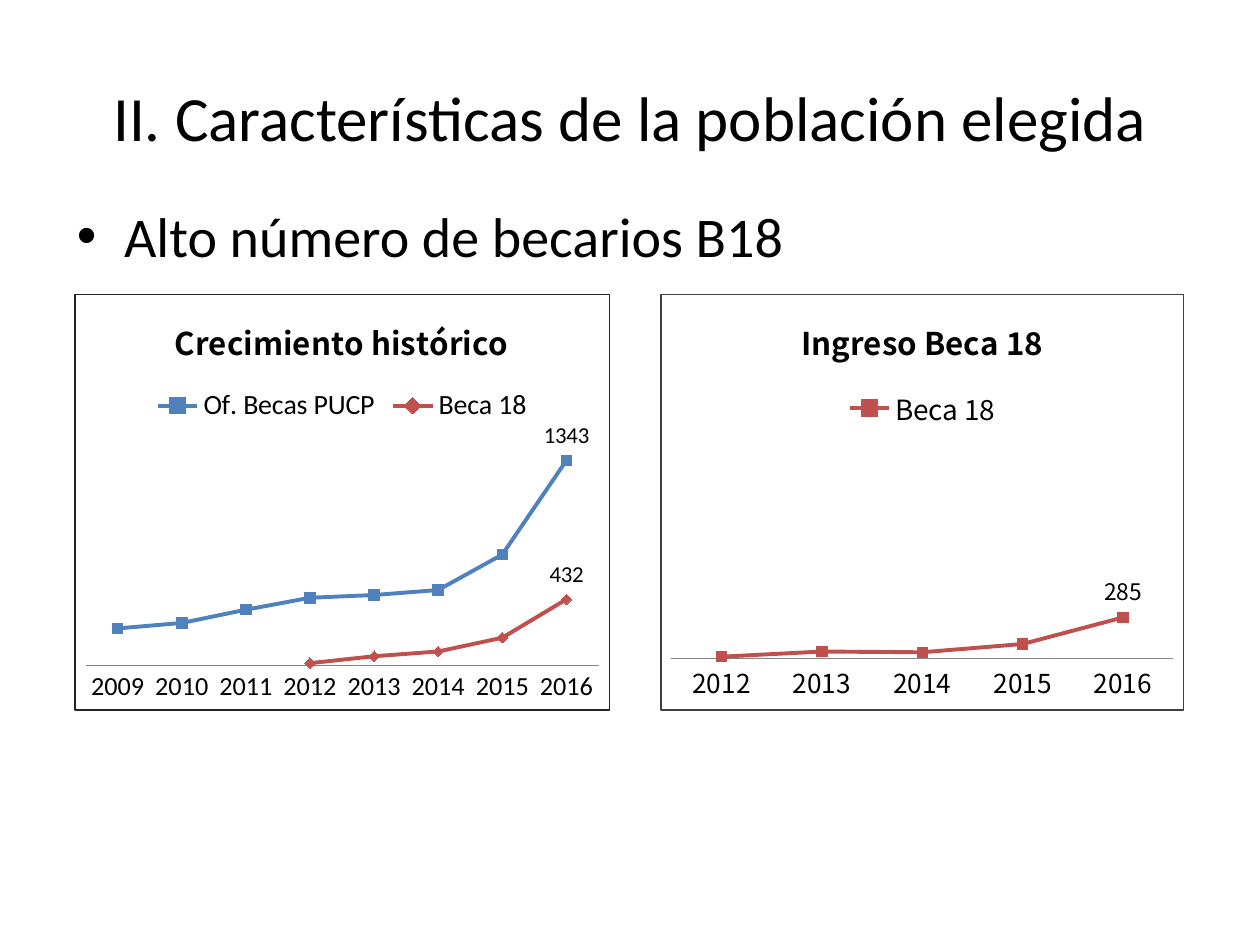
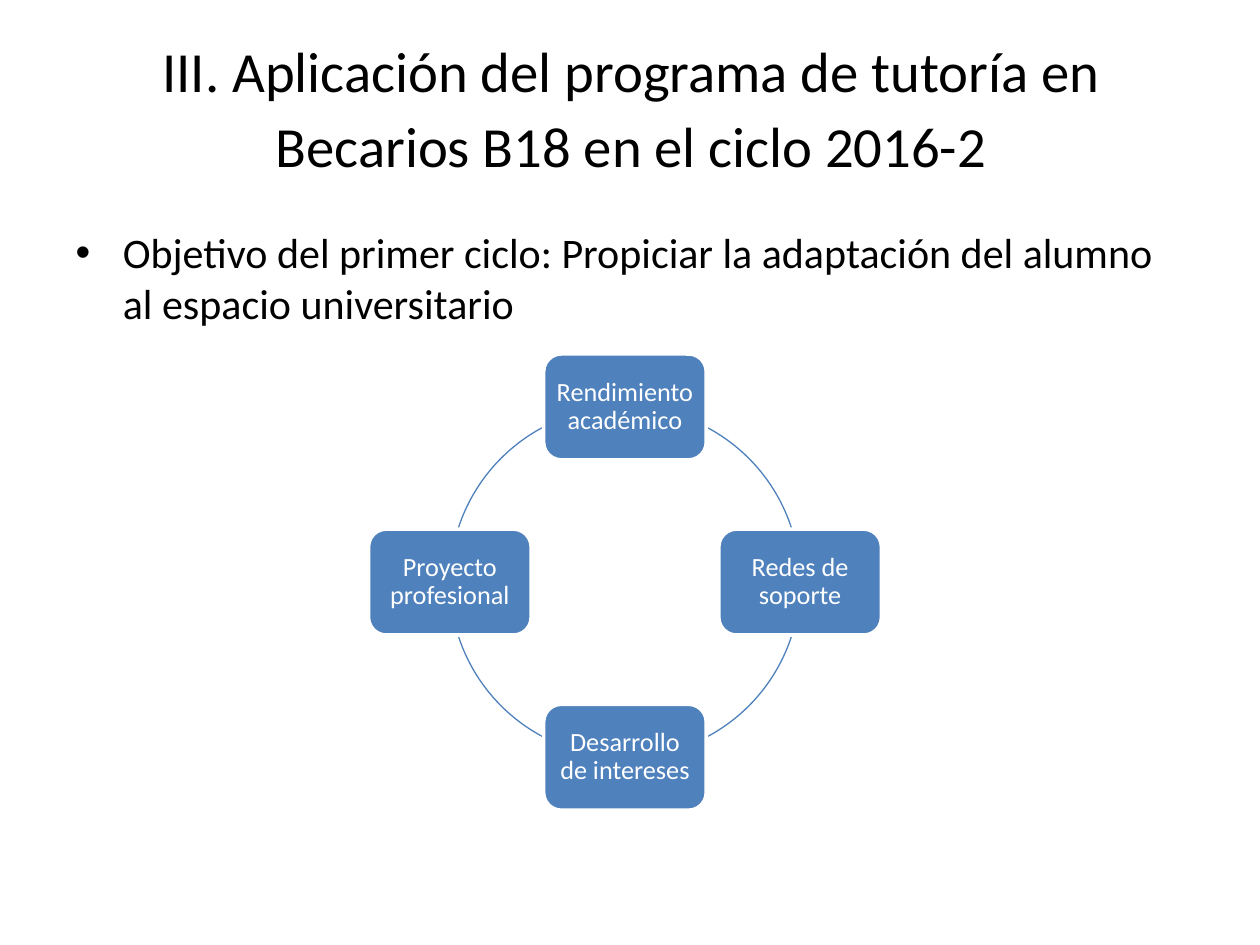
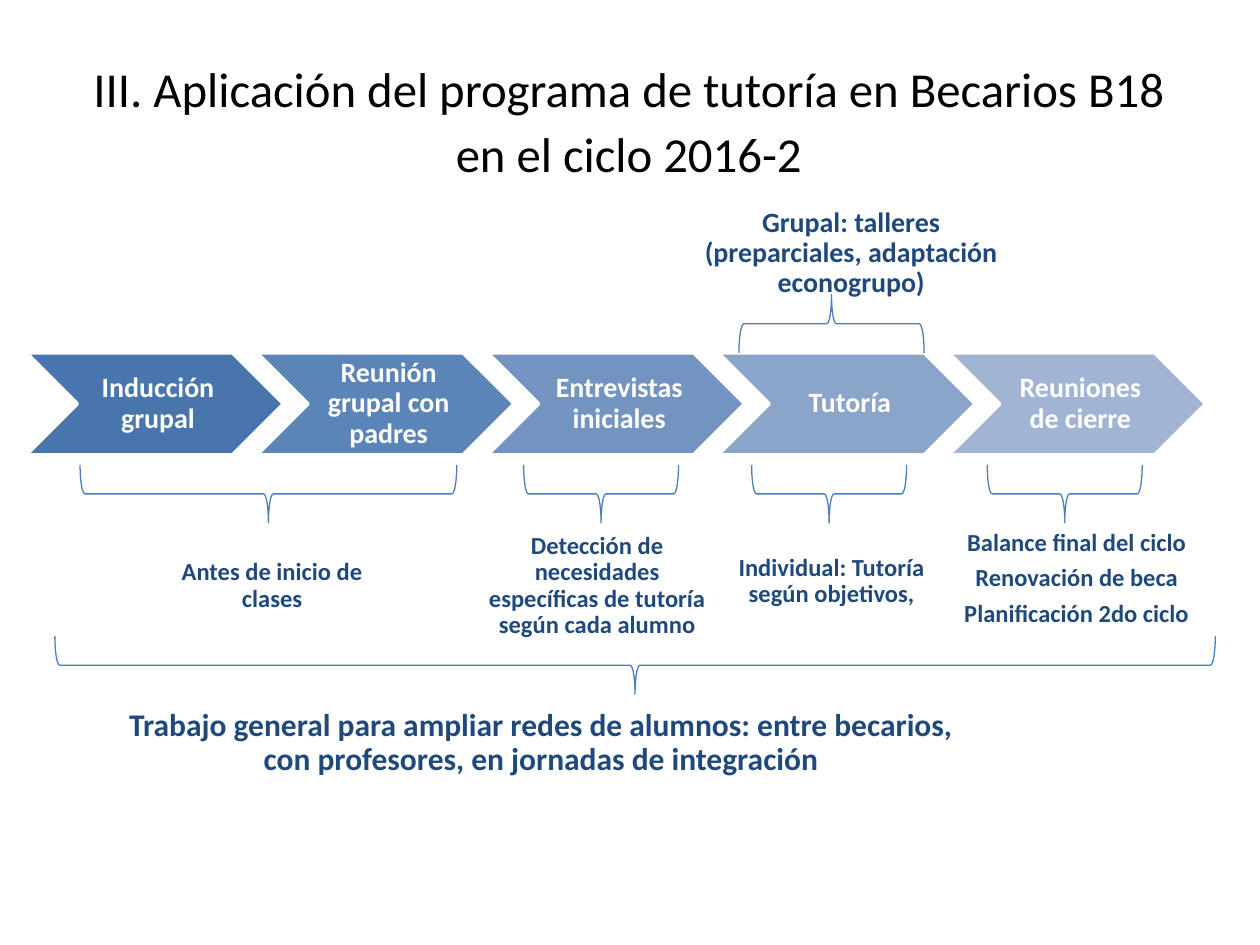
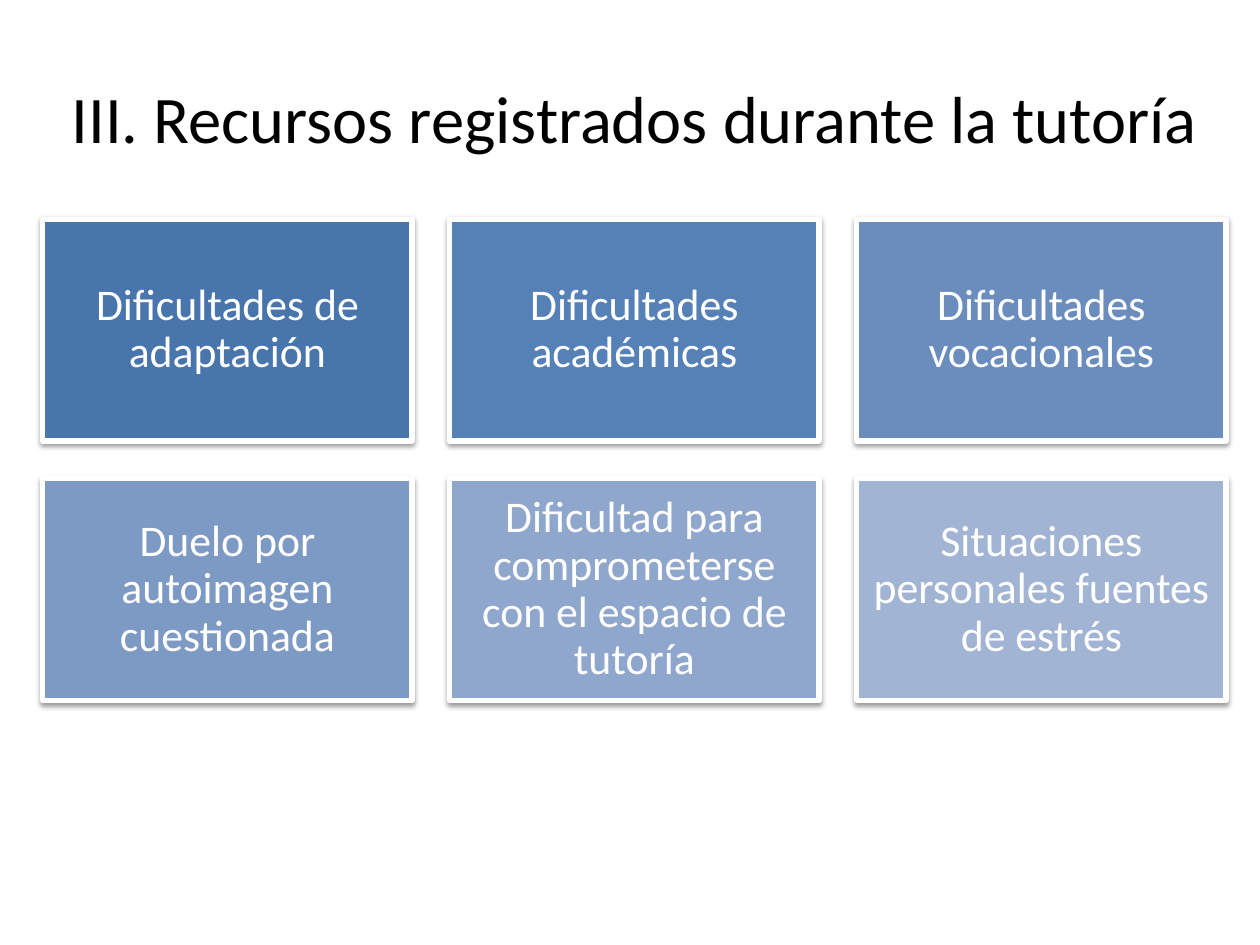
"""Builds four slides about the tutoring programme for scholarship students."""
import math

import lxml.etree
import pptx
import pptx.chart.data
import pptx.dml.color
import pptx.enum.chart
import pptx.enum.shapes
import pptx.enum.text
import pptx.oxml
import pptx.oxml.ns
import pptx.util

Inches = pptx.util.Inches
Pt = pptx.util.Pt
RGBColor = pptx.dml.color.RGBColor
Shape = pptx.enum.shapes.MSO_SHAPE
Align = pptx.enum.text.PP_ALIGN
Anchor = pptx.enum.text.MSO_ANCHOR
Marker = pptx.enum.chart.XL_MARKER_STYLE
qn = pptx.oxml.ns.qn

BLACK = RGBColor(0x00, 0x00, 0x00)
WHITE = RGBColor(0xFF, 0xFF, 0xFF)
BLUE = RGBColor(0x4F, 0x81, 0xBD)
RED = RGBColor(0xC0, 0x50, 0x4D)
NAVY = RGBColor(0x1F, 0x49, 0x7D)
BRACE_BLUE = RGBColor(0x4B, 0x7E, 0xBC)
AXIS_GRAY = RGBColor(0x86, 0x86, 0x86)
STEP_BLUES = [RGBColor.from_string(code) for code in
              ("4875AC", "5B84B9", "7393C1", "8BA4CA", "A2B4D4")]
TILE_BLUES = [RGBColor.from_string(code) for code in
              ("4875AC", "5681B7", "6A8DBE", "7D9AC5", "8FA7CC", "A2B4D4")]

TEXT_FONT = "Calibri"
CHART_FONT = "Noto Sans CJK KR"
TITLE_ONLY, TITLE_AND_BODY = 5, 1
PROGRAMME_TITLE = "III. Aplicación del programa de tutoría en Becarios B18 en el ciclo 2016-2"

CHART_BORDER = (
    '<c:spPr xmlns:c="http://schemas.openxmlformats.org/drawingml/2006/chart"'
    ' xmlns:a="http://schemas.openxmlformats.org/drawingml/2006/main">'
    '<a:solidFill><a:srgbClr val="FFFFFF"/></a:solidFill>'
    '<a:ln w="9525"><a:solidFill><a:srgbClr val="{}"/></a:solidFill></a:ln></c:spPr>')


def apply(target, values):
    """Set attributes of an object from a dict."""
    for name, value in values.items():
        setattr(target, name, value)


def set_font(font, size, color=BLACK, bold=False, name=TEXT_FONT):
    """Format a font."""
    apply(font, {"name": name, "size": Pt(size), "bold": bold})
    font.color.rgb = color


class SlideBuilder:
    """Holds the shared style and the current slide."""

    def __init__(self):
        """Start an empty 4:3 deck."""
        self.deck = pptx.Presentation()
        apply(self.deck, {"slide_width": Inches(10), "slide_height": Inches(7.5)})
        self.page = None

    def add_page(self, layout, title, size, at, spacing=1.0):
        """Add a slide with its title."""
        self.page = self.deck.slides.add_slide(self.deck.slide_layouts[layout])
        self.fill_placeholder(self.page.shapes.title, title, size, at, Anchor.MIDDLE)
        apply(self.page.shapes.title.text_frame.paragraphs[0],
              {"alignment": Align.CENTER, "line_spacing": spacing})

    def fill_placeholder(self, box, text, size, at, anchor):
        """Move a placeholder and fill its single paragraph."""
        apply(box, dict(zip(("left", "top", "width", "height"), map(Inches, at))))
        apply(box.text_frame, {"text": text, "word_wrap": True, "vertical_anchor": anchor,
                               "auto_size": pptx.enum.text.MSO_AUTO_SIZE.NONE})
        para = box.text_frame.paragraphs[0]
        para.space_before = Pt(0)
        set_font(para.font, size)

    def bullet(self, text, size, at):
        """Fill in the bulleted statement under the title."""
        self.fill_placeholder(self.page.placeholders[1], text, size, at, Anchor.TOP)

    def fill_text(self, box, lines, size, color, bold, insets):
        """Put centred paragraphs in a box."""
        margins = ("margin_left", "margin_top", "margin_right", "margin_bottom")
        frame = box.text_frame
        apply(frame, dict(zip(margins, map(Inches, insets))))
        apply(frame, {"text": "\n".join(lines), "word_wrap": True,
                      "vertical_anchor": Anchor.MIDDLE})
        for para in frame.paragraphs:
            apply(para, {"alignment": Align.CENTER, "line_spacing": 0.9,
                         "space_after": Pt(round(size * 0.35))})
            set_font(para.font, size, color, bold)

    def label(self, lines, size, at):
        """Add a bold navy caption."""
        box = self.page.shapes.add_textbox(*map(Inches, at))
        self.fill_text(box, lines, size, NAVY, True, [0.07] * 4)

    def shape(self, kind, at, fill=None, line=WHITE, line_width=2):
        """Add a preset shape without a theme shadow."""
        shape = self.page.shapes.add_shape(kind, *map(Inches, at))
        shape.shadow.inherit = False
        if fill is None:
            shape.fill.background()
        else:
            shape.fill.solid()
            shape.fill.fore_color.rgb = fill
        shape.line.color.rgb = line
        shape.line.width = Pt(line_width)
        return shape

    def block(self, kind, at, fill, text, size, insets, bold=False, line_width=2):
        """Add a filled shape with white text."""
        block = self.shape(kind, at, fill, line_width=line_width)
        self.fill_text(block, [text], size, WHITE, bold, insets)
        return block

    def drop_shadow(self, shape):
        """Give a shape a soft shadow below."""
        effects = shape.element.spPr.find(qn("a:effectLst"))
        shadow = lxml.etree.SubElement(effects, qn("a:outerShdw"), {
            "blurRad": str(Pt(3.1)), "dist": str(Pt(1.6)), "dir": "5400000"})
        color = lxml.etree.SubElement(shadow, qn("a:srgbClr"), val="000000")
        lxml.etree.SubElement(color, qn("a:alpha"), val="38000")

    def brace(self, center_x, center_y, span, rotation=90):
        """Add a horizontal brace around a centre."""
        depth = 0.46
        at = (center_x - depth / 2, center_y - span / 2, depth, span)
        self.shape(Shape.RIGHT_BRACE, at, line=BRACE_BLUE, line_width=0.75).rotation = rotation

    def arc(self, at, start, end):
        """Add a thin arc between two angles in degrees."""
        arc = self.shape(Shape.ARC, at, line=BLUE, line_width=0.75)
        for index, angle in enumerate((start, end)):
            arc.adjustments[index] = angle * 0.6

    def line_chart(self, title, at, categories, series_rows, font_name, border):
        """Add a line chart that labels only its last points."""
        data = pptx.chart.data.CategoryChartData()
        data.categories = categories
        for name, values, color, marker in series_rows:
            data.add_series(name, values)
        chart = self.page.shapes.add_chart(
            pptx.enum.chart.XL_CHART_TYPE.LINE_MARKERS, *map(Inches, at), data).chart
        set_font(chart.font, 18, name=font_name)
        chart.element.find(qn("c:chart")).addnext(
            pptx.oxml.parse_xml(CHART_BORDER.format(border)))

        chart.has_title = True
        chart.chart_title.text_frame.text = title
        set_font(chart.chart_title.text_frame.paragraphs[0].runs[0].font, 18,
                 bold=True, name=CHART_FONT)
        chart.has_legend = True
        apply(chart.legend, {"position": pptx.enum.chart.XL_LEGEND_POSITION.TOP,
                             "include_in_layout": False})
        set_font(chart.legend.font, 16, name=font_name)

        apply(chart.value_axis, {"minimum_scale": 0, "maximum_scale": 1500,
                                 "has_major_gridlines": False, "visible": False})
        axis = chart.category_axis
        axis.major_tick_mark = pptx.enum.chart.XL_TICK_MARK.NONE
        axis.format.line.color.rgb = AXIS_GRAY
        set_font(axis.tick_labels.font, 15, name=font_name)

        chart.plots[0].vary_by_categories = False
        for series, (name, values, color, marker) in zip(chart.plots[0].series, series_rows):
            series.smooth = False
            series.format.line.color.rgb = color
            series.format.line.width = Pt(2.25)
            apply(series.marker, {"style": marker, "size": 6})
            series.marker.format.fill.solid()
            series.marker.format.fill.fore_color.rgb = color
            series.marker.format.line.color.rgb = color
            last_label = series.points[len(values) - 1].data_label
            set_font(last_label.font, 13, name=font_name)
            last_label.position = pptx.enum.chart.XL_LABEL_POSITION.ABOVE


def population_page(builder):
    """Show the growth in scholarship students."""
    builder.add_page(TITLE_AND_BODY, "II. Características de la población elegida", 36,
                     (0.5, 0.3, 9, 1.25))
    builder.bullet("Alto número de becarios B18", 32, (0.51, 1.55, 9, 0.9))
    builder.line_chart(
        "Crecimiento histórico", (0.59, 2.33, 4.25, 3.31),
        [str(year) for year in range(2009, 2017)],
        [("Of. Becas PUCP", (241, 277, 364, 442, 460, 493, 726, 1343), BLUE, Marker.SQUARE),
         ("Beca 18", (None, None, None, 13, 59, 90, 180, 432), RED, Marker.DIAMOND)],
        TEXT_FONT, "262626")
    builder.line_chart(
        "Ingreso Beca 18", (5.24, 2.33, 4.16, 3.31),
        [str(year) for year in range(2012, 2017)],
        [("Beca 18", (13, 49, 44, 101, 285), RED, Marker.SQUARE)],
        CHART_FONT, "404040")


def goals_page(builder):
    """Show the four goals around a circle."""
    builder.add_page(TITLE_AND_BODY, PROGRAMME_TITLE, 32.4, (0.51, 0.2, 9, 1.25), 1.1)
    builder.bullet("Objetivo del primer ciclo: Propiciar la adaptación del alumno al espacio "
                   "universitario", 24, (0.5, 1.75, 9, 1.06))
    center_x, center_y, radius = 4.96, 4.62, 1.39
    width, height = 1.29, 0.84
    circle = (center_x - radius, center_y - radius, 2 * radius, 2 * radius)
    for middle in (40, 140, 220, 320):
        builder.arc(circle, middle - 22, middle + 22)
    goals = ("Rendimiento académico", "Redes de soporte",
             "Desarrollo de intereses", "Proyecto profesional")
    for index, goal in enumerate(goals):
        angle = math.radians(90 * index - 90)
        left = center_x + radius * math.cos(angle) - width / 2
        top = center_y + radius * math.sin(angle) - height / 2
        builder.block(Shape.ROUNDED_RECTANGLE, (left, top, width, height), BLUE, goal, 15,
                      [0.06] * 4)


def stages_page(builder):
    """Show the stages of the programme with their braces."""
    builder.add_page(TITLE_ONLY, PROGRAMME_TITLE, 27.9, (0.49, 0.31, 9, 1.25), 1.1)
    stages = ("Inducción grupal", "Reunión grupal con padres", "Entrevistas iniciales",
              "Tutoría", "Reuniones de cierre")
    for index, (stage, color) in enumerate(zip(stages, STEP_BLUES)):
        builder.block(Shape.CHEVRON, (0.21 + 1.83 * index, 2.8, 2.04, 0.81), color, stage, 16,
                      (0.07, 0.02, 0.02, 0.02), bold=True)

    for center_x, span in ((2.13, 2.99), (4.77, 1.23), (6.58, 1.23), (8.45, 1.23)):
        builder.brace(center_x, 3.92, span)
    builder.brace(6.6, 2.57, 1.47, 270)
    builder.brace(5.04, 5.28, 9.21)

    captions = [
        (["Antes de inicio de clases"], 14, (1.23, 4.3, 1.86, 0.7)),
        (["Detección de necesidades específicas de tutoría según cada alumno"], 14,
         (3.81, 4.2, 1.86, 0.9)),
        (["Individual: Tutoría según objetivos,"], 14, (5.67, 4.3, 1.86, 0.63)),
        (["Grupal: talleres (preparciales, adaptación econogrupo)"], 16,
         (5.44, 1.55, 2.63, 0.92)),
        (["Balance final del ciclo", "Renovación de beca", "Planificación 2do ciclo"], 14,
         (7.45, 4.06, 2.19, 1.07)),
        (["Trabajo general para ampliar redes de alumnos: entre becarios, con profesores, "
          "en jornadas de integración"], 18, (0.91, 5.5, 6.77, 0.8)),
    ]
    for lines, size, at in captions:
        builder.label(lines, size, at)


def resources_page(builder):
    """Show the recorded difficulties as a grid of tiles."""
    builder.add_page(TITLE_ONLY, "III. Recursos registrados durante la tutoría", 38,
                     (0.43, 0.3, 9.22, 1.25))
    difficulties = ("Dificultades de adaptación", "Dificultades académicas",
                    "Dificultades vocacionales", "Duelo por autoimagen cuestionada",
                    "Dificultad para comprometerse con el espacio de tutoría",
                    "Situaciones personales fuentes de estrés")
    for index, (difficulty, color) in enumerate(zip(difficulties, TILE_BLUES)):
        row, column = divmod(index, 3)
        at = (0.34 + 3.23 * column, 1.74 + 2.06 * row, 2.93, 1.76)
        tile = builder.block(Shape.RECTANGLE, at, color, difficulty, 25, [0.1] * 4, line_width=3)
        builder.drop_shadow(tile)


def main():
    """Build and save the deck."""
    builder = SlideBuilder()
    for build_page in (population_page, goals_page, stages_page, resources_page):
        build_page(builder)
    builder.deck.save("out.pptx")


if __name__ == "__main__":
    main()
